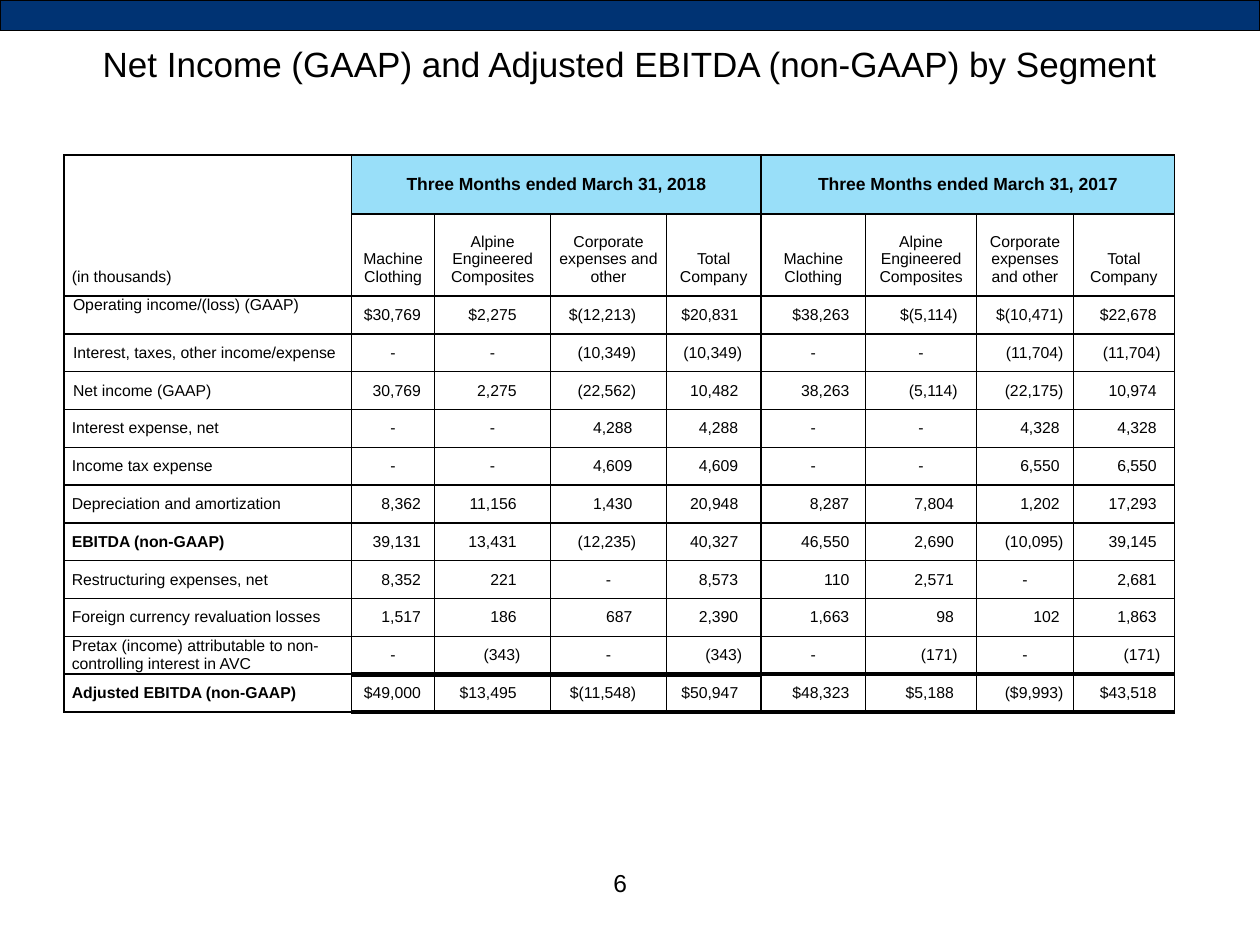
from lxml import etree
from pptx import Presentation
from pptx.dml.color import RGBColor
from pptx.enum.shapes import MSO_SHAPE
from pptx.enum.text import MSO_ANCHOR, PP_ALIGN
from pptx.oxml.ns import qn
from pptx.util import Inches, Pt

LEFT, CENTER, RIGHT = PP_ALIGN.LEFT, PP_ALIGN.CENTER, PP_ALIGN.RIGHT
TOP, MIDDLE, BOTTOM = MSO_ANCHOR.TOP, MSO_ANCHOR.MIDDLE, MSO_ANCHOR.BOTTOM
COLORS = {"navy": "003373", "black": "000000", "sky": "00B0F0"}
THIN, THICK = 1, 3
ROW_HEIGHTS = [0.47, 0.65] + [0.3] * 11
PAREN_HANG = 0.03  # a closing bracket sits right of the digits

# Data: label, then four values for each year
HEADINGS = ["Machine Clothing", "Alpine Engineered Composites",
            "Corporate expenses and other", "Total Company"]
ROWS = [
    ("Operating income/(loss) (GAAP)",
     "$30,769 $2,275 $(12,213) $20,831", "$38,263 $(5,114) $(10,471) $22,678"),
    ("Interest, taxes, other income/expense",
     "- - (10,349) (10,349)", "- - (11,704) (11,704)"),
    ("Net income (GAAP)",
     "30,769 2,275 (22,562) 10,482", "38,263 (5,114) (22,175) 10,974"),
    ("Interest expense, net", "- - 4,288 4,288", "- - 4,328 4,328"),
    ("Income tax expense", "- - 4,609 4,609", "- - 6,550 6,550"),
    ("Depreciation and amortization",
     "8,362 11,156 1,430 20,948", "8,287 7,804 1,202 17,293"),
    ("EBITDA (non-GAAP)",
     "39,131 13,431 (12,235) 40,327", "46,550 2,690 (10,095) 39,145"),
    ("Restructuring expenses, net",
     "8,352 221 - 8,573", "110 2,571 - 2,681"),
    ("Foreign currency revaluation losses",
     "1,517 186 687 2,390", "1,663 98 102 1,863"),
    ("Pretax (income) attributable to non-controlling interest in AVC",
     "- (343) - (343)", "- (171) - (171)"),
    ("Adjusted EBITDA (non-GAAP)",
     "$49,000 $13,495 $(11,548) $50,947", "$48,323 $5,188 ($9,993) $43,518"),
]
BOLD_LABELS = {"EBITDA (non-GAAP)", "Adjusted EBITDA (non-GAAP)"}


class SlideBuilder:
    font = "Arial"

    def __init__(self, slide):
        self.s = slide

    def add_words(self, tf, text, size, align=LEFT, bold=False):
        p = tf.paragraphs[0]
        p.alignment = align
        r = p.add_run()
        r.text = text
        style = {"name": self.font, "size": Pt(size), "bold": bold}
        for name, value in style.items():
            setattr(r.font, name, value)
        r.font.color.rgb = RGBColor.from_string(COLORS["black"])

    def bar(self, x, y, w, h):
        sp = self.s.shapes.add_shape(MSO_SHAPE.RECTANGLE, *map(Inches, (x, y, w, h)))
        sp.shadow.inherit = False
        sp.fill.solid()
        sp.fill.fore_color.rgb = RGBColor.from_string(COLORS["navy"])
        sp.line.color.rgb = RGBColor.from_string(COLORS["black"])
        sp.line.width = Pt(0.75)

    def text(self, x, y, w, h, text, size, align=LEFT):
        sp = self.s.shapes.add_textbox(*map(Inches, (x, y, w, h)))
        sp.text_frame.word_wrap = True
        self.add_words(sp.text_frame, text, size, align)

    def table(self, x, y, widths):
        frame = self.s.shapes.add_table(
            len(ROW_HEIGHTS), len(widths),
            *map(Inches, (x, y, sum(widths), sum(ROW_HEIGHTS))))
        table = frame.table
        table.first_row = table.horz_banding = False
        for col, width in zip(table.columns, widths):
            col.width = Inches(width)
        for row, height in zip(table.rows, ROW_HEIGHTS):
            row.height = Inches(height)
        for cell in table.iter_cells():
            self.borders(cell)
            cell.fill.background()
        return table

    def borders(self, cell, **widths):
        """Draw the four sides; a width of 0 hides a side."""
        tcPr = cell._tc.get_or_add_tcPr()
        for old in tcPr.xpath("a:lnL|a:lnR|a:lnT|a:lnB"):
            tcPr.remove(old)
        for i, side in enumerate("LRTB"):
            width = widths.get(side, THIN)
            ln = etree.Element(qn(f"a:ln{side}"), w=str(Pt(width)))
            if width:
                fill = etree.SubElement(ln, qn("a:solidFill"))
                etree.SubElement(fill, qn("a:srgbClr"), val=COLORS["black"])
            else:
                etree.SubElement(ln, qn("a:noFill"))
            tcPr.insert(i, ln)

    def cell(self, cell, text, size=9, align=CENTER, bold=False,
             anchor=MIDDLE, left=0.06, right=0.06, bottom=0):
        margins = {"margin_left": left, "margin_right": right,
                   "margin_top": 0, "margin_bottom": bottom}
        for name, value in margins.items():
            setattr(cell, name, Inches(value))
        cell.vertical_anchor = anchor
        self.add_words(cell.text_frame, text, size, align, bold)

    def year(self, table, first, year, values, insets):
        """Fill four columns, starting at column first."""
        head = table.cell(0, first)
        head.merge(table.cell(0, first + 3))
        self.cell(head, f"Three Months ended March 31, {year}", 10, bold=True)
        head.fill.solid()
        head.fill.fore_color.rgb = RGBColor.from_string(COLORS["sky"])
        color = head._tc.tcPr.find(f"{qn('a:solidFill')}/{qn('a:srgbClr')}")
        etree.SubElement(color, qn("a:alpha"), val="40000")

        for c, heading in enumerate(HEADINGS, first):
            self.cell(table.cell(1, c), heading, anchor=BOTTOM, bottom=0.08)
        for r, line in enumerate(values, 2):
            for c, (value, inset) in enumerate(zip(line.split(), insets), first):
                if value == "-":
                    self.cell(table.cell(r, c), value)
                else:
                    hang = PAREN_HANG if value.endswith(")") else 0
                    self.cell(table.cell(r, c), value, align=RIGHT,
                              left=0, right=inset - hang)
        # Heavy rules around the last row
        last = len(ROW_HEIGHTS) - 1
        for c in range(first, first + 4):
            self.borders(table.cell(last - 1, c), B=THICK)
            self.borders(table.cell(last, c), T=THICK, B=THICK)

    def labels(self, table):
        self.borders(table.cell(0, 0), B=0)
        self.borders(table.cell(1, 0), T=0)
        self.cell(table.cell(1, 0), "(in thousands)", align=LEFT,
                  anchor=BOTTOM, bottom=0.08)
        for r, (label, *_) in enumerate(ROWS, 2):
            self.cell(table.cell(r, 0), label, align=LEFT,
                      bold=label in BOLD_LABELS,
                      anchor=TOP if r == 2 else MIDDLE,
                      left=0.07 if r < 5 else 0.06)


def main():
    prs = Presentation()
    prs.slide_width, prs.slide_height = Inches(10), Inches(7.5)
    b = SlideBuilder(prs.slides.add_slide(prs.slide_layouts[6]))

    # Top band, title and page number
    b.bar(0, 0, 10, 0.24)
    b.text(0.5, 0.29, 9, 1.25,
           "Net Income (GAAP) and Adjusted EBITDA (non-GAAP) by Segment", 20, CENTER)
    b.text(4.77, 6.84, 0.37, 0.34, "6", 14)

    # Row labels with 2018, then 2017 beside them
    table = b.table(0.51, 1.23, [2.28, 0.66, 0.92, 0.92, 0.75])
    b.labels(table)
    b.year(table, 1, 2018, [row[1] for row in ROWS], [0.11, 0.27, 0.27, 0.18])
    table = b.table(6.04, 1.23, [0.83, 0.88, 0.77, 0.8])
    b.year(table, 0, 2017, [row[2] for row in ROWS], [0.13, 0.18, 0.11, 0.14])

    prs.save("out.pptx")


if __name__ == "__main__":
    main()
